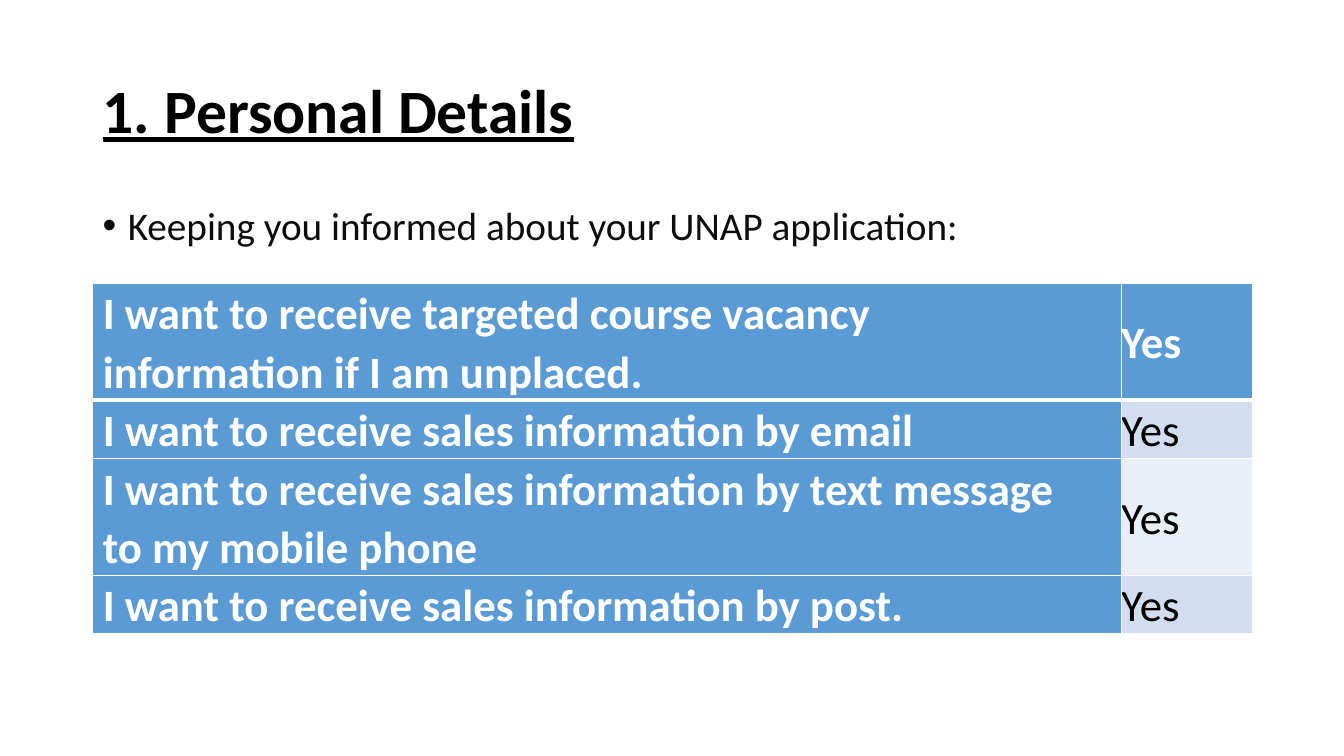
from dataclasses import dataclass

from lxml import etree
from pptx import Presentation
from pptx.dml.color import RGBColor
from pptx.enum.text import MSO_ANCHOR
from pptx.oxml.ns import qn
from pptx.util import Inches, Pt

MIDDLE = MSO_ANCHOR.MIDDLE
TOP = MSO_ANCHOR.TOP
BLANK = 6


@dataclass(frozen=True)
class Theme:
    """Colours, font and type sizes of the slide."""
    font: str = "Calibri"
    black: str = "000000"
    ink: str = "0D0D0D"
    white: str = "FFFFFF"
    blue: str = "5B9BD5"
    bands: tuple = ("D2DEEF", "EAEFF7")
    title: int = 44
    body: int = 28
    cell: int = 32


THEME = Theme()
CHOICES = [
    (" I want to receive targeted course vacancy\n information if I am unplaced.", "Yes "),
    (" I want to receive sales information by email", "Yes "),
    (" I want to receive sales information by text message\n to my mobile phone", "Yes "),
    (" I want to receive sales information by post.", "Yes "),
]


def style(frame, size, color, space, bold=False, line=False):
    """Format every run and the line spacing of a text frame."""
    for para in frame.paragraphs:
        para.line_spacing = space
        for run in para.runs:
            font = run.font
            font.name, font.size = THEME.font, Pt(size)
            font.bold, font.underline = bold, line
            font.color.rgb = RGBColor.from_string(color)


def add_text(slide, box, text, anchor):
    """Add a wrapping text box and return its frame."""
    frame = slide.shapes.add_textbox(*map(Inches, box)).text_frame
    frame.word_wrap = True
    frame.vertical_anchor = anchor
    frame.text = text
    return frame


def add_title(slide, box):
    """Place the underlined heading."""
    frame = add_text(slide, box, "1. Personal Details", MIDDLE)
    style(frame, THEME.title, THEME.black, 0.9, bold=True, line=True)


def add_intro(slide, box):
    """Place the bulleted lead-in line."""
    text = "Keeping you informed about your UNAP application:"
    frame = add_text(slide, box, text, TOP)
    style(frame, THEME.body, THEME.ink, 0.9)
    para = frame.paragraphs[0]
    para.space_before = Pt(10)
    props = para._p.get_or_add_pPr()
    props.set("marL", str(Inches(0.25)))
    props.set("indent", str(Inches(-0.25)))
    etree.SubElement(props, qn("a:buFont"), typeface="Arial")
    etree.SubElement(props, qn("a:buChar"), char="•")


def add_edges(cell, widths):
    """Draw white borders on a cell, one width per side."""
    props = cell._tc.get_or_add_tcPr()
    for spot, (side, width) in enumerate(widths.items()):
        edge = etree.Element(qn("a:ln" + side), w=str(Pt(width)))
        fill = etree.SubElement(edge, qn("a:solidFill"))
        etree.SubElement(fill, qn("a:srgbClr"), val=THEME.white)
        props.insert(spot, edge)


def add_choices(slide, box):
    """Place the table of contact choices."""
    left, top, width, unit = box
    lines = [text.count("\n") + 1 for text, _ in CHOICES]
    spot = map(Inches, (left, top, width, unit * sum(lines)))
    table = slide.shapes.add_table(len(CHOICES), 2, *spot).table
    answer = 1.3
    table.columns[0].width = Inches(width - answer)
    table.columns[1].width = Inches(answer)
    for row, texts in enumerate(CHOICES):
        table.rows[row].height = Inches(unit * lines[row])
        for col, text in enumerate(texts):
            cell = table.cell(row, col)
            head = row == 0 or col == 0
            shade = THEME.blue if head else THEME.bands[(row - 1) % 2]
            cell.fill.solid()
            cell.fill.fore_color.rgb = RGBColor.from_string(shade)
            cell.vertical_anchor = MIDDLE
            cell.margin_left = cell.margin_top = cell.margin_bottom = 0
            cell.margin_right = Inches(0 if col else 0.21)
            cell.text_frame.text = text
            color = THEME.white if head else THEME.black
            style(cell.text_frame, THEME.cell, color, 1.07, bold=head)
            add_edges(cell, {"L": 1, "R": 1, "T": 3 if row == 1 else 1,
                             "B": 3 if row == 0 else 1})


def main():
    """Build and save the slide."""
    deck = Presentation()
    deck.slide_width, deck.slide_height = Inches(13.33), Inches(7.5)
    slide = deck.slides.add_slide(deck.slide_layouts[BLANK])
    left, width = 0.92, 11.5
    add_title(slide, (left, 0.4, width, 1.45))
    add_intro(slide, (left, 2, width, 4.76))
    add_choices(slide, (left, 2.81, width, 0.58))
    deck.save("out.pptx")


if __name__ == "__main__":
    main()
